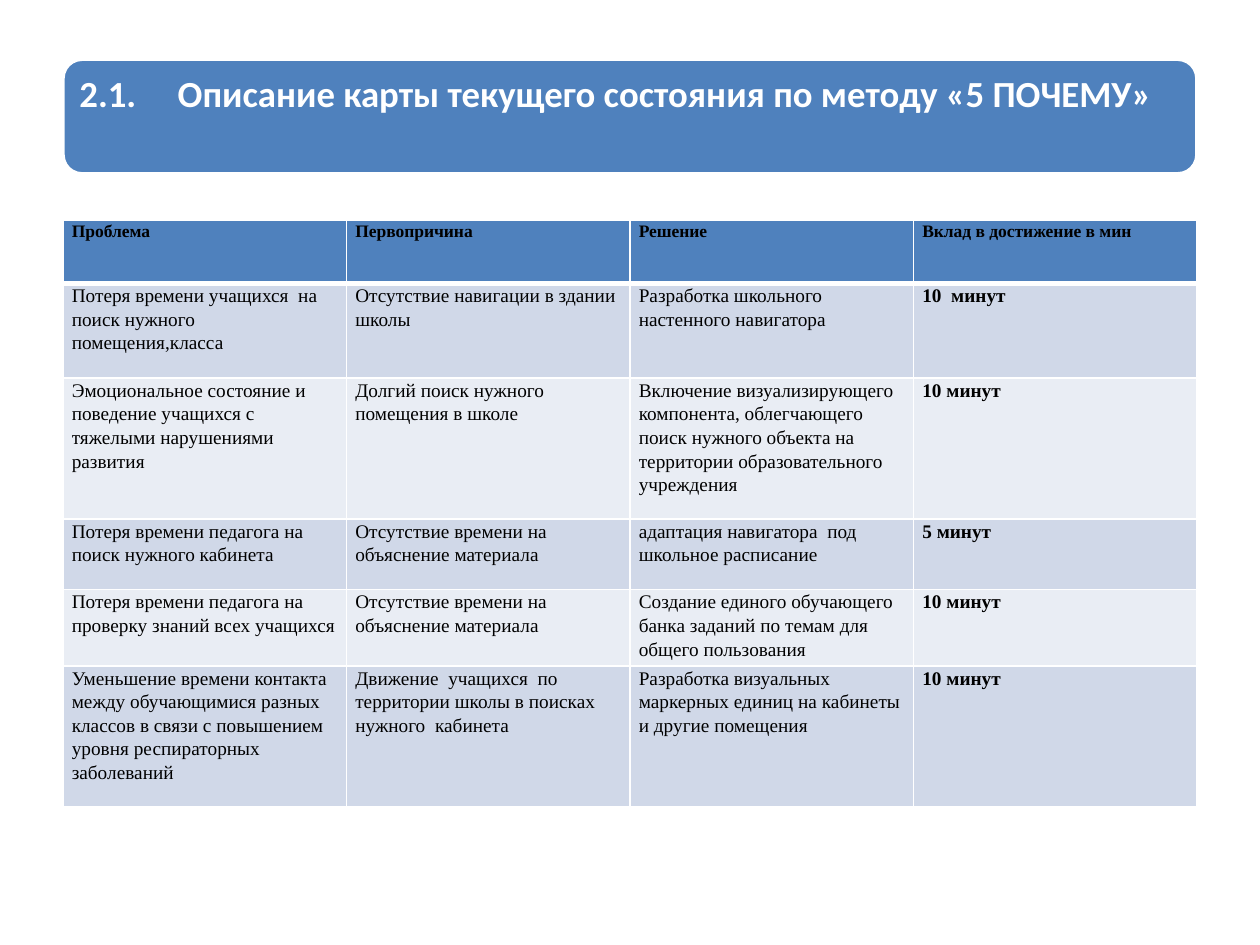
from lxml.etree import SubElement
from pptx import Presentation
from pptx.dml.color import RGBColor
from pptx.enum.shapes import MSO_SHAPE as Shape
from pptx.enum.text import MSO_ANCHOR as Anchor, PP_ALIGN as Align
from pptx.oxml.ns import qn
from pptx.util import Inches, Pt

BLUE = RGBColor(0x4F, 0x81, 0xBD)
BAND_DARK = RGBColor(0xD0, 0xD8, 0xE8)
BAND_LIGHT = RGBColor(0xE9, 0xED, 0xF4)
WHITE = RGBColor(0xFF, 0xFF, 0xFF)
BLACK = RGBColor(0, 0, 0)

# Grid in inches: four equal columns between the side margins
MARGIN = 0.5
COLUMN = 2.25
COLUMNS = 4
TABLE_TOP = 1.75
ROW_HEIGHTS = [0.5, 0.75, 1.12, 0.56, 0.56, 1.12]

TITLE_FORMAT = {"name": "Calibri", "size": Pt(21), "bold": True}
HEADER_FORMAT = {"name": "Times New Roman", "size": Pt(10), "bold": True}
BODY_FORMAT = {"name": "Times New Roman", "size": Pt(11), "bold": False}
MINUTES_FORMAT = BODY_FORMAT | {"bold": True}
CELL_MARGINS = {"margin_left": Inches(0.07), "margin_right": Inches(0.07),
                "margin_top": 0, "margin_bottom": 0}

TITLE = "2.1.\tОписание карты текущего состояния по методу «5 ПОЧЕМУ»"
ROWS = [
    ["Проблема", "Первопричина", "Решение", "Вклад в достижение в мин"],
    ["Потеря времени учащихся  на поиск нужного помещения,класса",
     "Отсутствие навигации в здании школы",
     "Разработка школьного настенного навигатора",
     "10  минут"],
    ["Эмоциональное состояние и поведение учащихся с  тяжелыми нарушениями развития",
     "Долгий поиск нужного помещения в школе",
     "Включение визуализирующего компонента, облегчающего поиск нужного объекта "
     "на территории образовательного учреждения",
     "10 минут"],
    ["Потеря времени педагога на поиск нужного кабинета",
     "Отсутствие времени на объяснение материала",
     "адаптация навигатора  под  школьное расписание",
     "5 минут"],
    ["Потеря времени педагога на проверку знаний всех учащихся",
     "Отсутствие времени на объяснение материала",
     "Создание единого обучающего банка заданий по темам для общего пользования",
     "10 минут"],
    ["Уменьшение времени контакта между обучающимися разных классов в связи "
     "с повышением уровня респираторных заболеваний",
     "Движение  учащихся  по территории школы в поисках нужного  кабинета",
     "Разработка визуальных маркерных единиц на кабинеты и другие помещения",
     "10 минут"],
]


def set_attributes(target, values):
    for name, value in values.items():
        setattr(target, name, value)


def write_text(frame, text, font_format, color, line_spacing):
    paragraph = frame.paragraphs[0]
    set_attributes(paragraph, {"alignment": Align.LEFT, "line_spacing": line_spacing})
    run = paragraph.add_run()
    run.text = text
    set_attributes(run.font, font_format)
    run.font.color.rgb = color
    return paragraph


def add_tab_stop(paragraph, position):
    tabs = SubElement(paragraph._p.get_or_add_pPr(), qn("a:tabLst"))
    SubElement(tabs, qn("a:tab"), pos=str(Inches(position)), algn="l")


def add_banner(slide):
    banner = slide.shapes.add_shape(
        Shape.ROUNDED_RECTANGLE, Inches(MARGIN), Inches(0.47),
        Inches(COLUMN * COLUMNS), Inches(0.91))
    banner.shadow.inherit = False
    banner.fill.solid()
    banner.fill.fore_color.rgb = BLUE
    banner.line.color.rgb = WHITE
    banner.line.width = Pt(2)


def add_title(slide):
    box = slide.shapes.add_textbox(Inches(0.54), Inches(0.51), Inches(8.91), Inches(0.82))
    inset = Inches(0.09)
    set_attributes(box.text_frame, {
        "word_wrap": True, "vertical_anchor": Anchor.TOP,
        "margin_left": inset, "margin_right": inset,
        "margin_top": inset, "margin_bottom": inset})
    paragraph = write_text(box.text_frame, TITLE, TITLE_FORMAT, WHITE, 0.9)
    add_tab_stop(paragraph, 0.78)


def set_borders(cell, widths):
    properties = cell._tc.get_or_add_tcPr()
    for side, width in widths.items():
        line = SubElement(properties, qn(f"a:ln{side}"), w=str(Pt(width)))
        fill = SubElement(line, qn("a:solidFill"))
        SubElement(fill, qn("a:srgbClr"), val=str(WHITE))


def style_for(row, column):
    """Return the fill and font format of a cell."""
    if row == 0:
        return BLUE, HEADER_FORMAT
    fill = BAND_DARK if row % 2 else BAND_LIGHT
    return fill, MINUTES_FORMAT if column == COLUMNS - 1 else BODY_FORMAT


def fill_cell(cell, text, row, column):
    color, font_format = style_for(row, column)
    set_attributes(cell, CELL_MARGINS)
    set_borders(cell, {"L": 1, "R": 1, "T": 3 if row == 1 else 1, "B": 3 if row == 0 else 1})
    cell.fill.solid()
    cell.fill.fore_color.rgb = color
    write_text(cell.text_frame, text, font_format, BLACK, 1.1)


def add_problem_table(slide):
    table = slide.shapes.add_table(
        len(ROWS), COLUMNS, Inches(MARGIN), Inches(TABLE_TOP),
        Inches(COLUMN * COLUMNS), Inches(sum(ROW_HEIGHTS))).table
    for column in table.columns:
        column.width = Inches(COLUMN)
    for row, (texts, height) in enumerate(zip(ROWS, ROW_HEIGHTS)):
        table.rows[row].height = Inches(height)
        for column, text in enumerate(texts):
            fill_cell(table.cell(row, column), text, row, column)


def main():
    presentation = Presentation()
    set_attributes(presentation, {"slide_width": Inches(10), "slide_height": Inches(7.5)})
    slide = presentation.slides.add_slide(presentation.slide_layouts[6])
    # Heading
    add_banner(slide)
    add_title(slide)
    # Problems, causes and solutions
    add_problem_table(slide)
    presentation.save("out.pptx")


if __name__ == "__main__":
    main()
